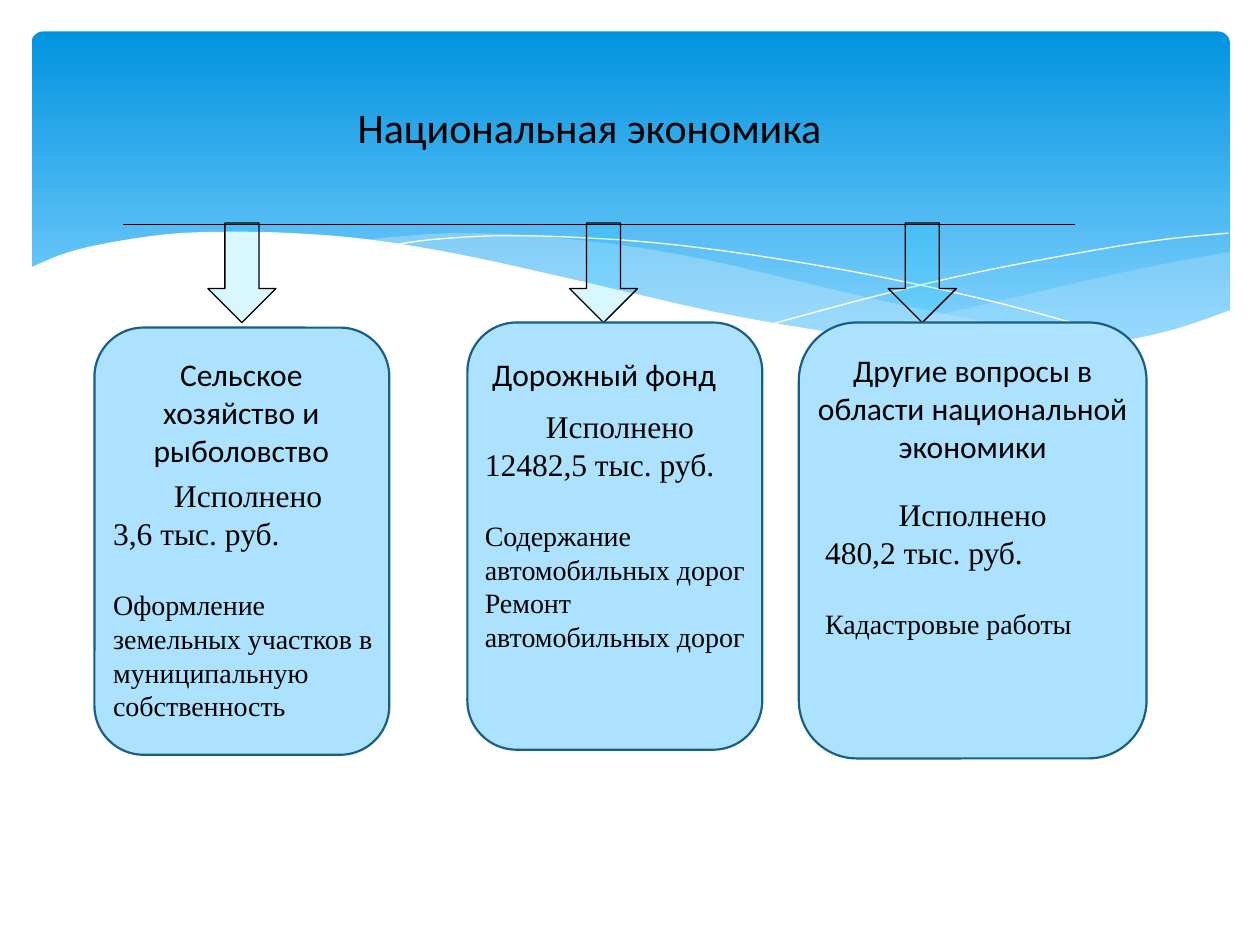
import lxml.etree
import pptx
import pptx.dml.color
import pptx.enum.shapes
import pptx.enum.text
import pptx.oxml.ns
import pptx.util

KIND = pptx.enum.shapes.MSO_SHAPE
ALIGN = pptx.enum.text.PP_ALIGN
COLS, ROWS = 100, 75
WIDE, HIGH = pptx.util.Inches(10), pptx.util.Inches(7.5)
COL, ROW = WIDE / COLS, HIGH / ROWS
HUES = {"ink": "000000", "white": "FFFFFF", "deep": "0293E0", "sky": "83D3FE",
        "mist": "C6E7FC", "cyan": "00CCFF", "card": "ADE2FE", "edge": "195F84"}
LOOKS = {
    "near": {"fill": "mist", "alpha": 29},
    "far": {"fill": "mist", "alpha": 40},
    "base": {"fill": "white"},
    "thread": {"line": "white", "width": 0},
    "arrow": {"fill": "cyan", "alpha": 15, "line": "ink", "width": 0.75},
    "card": {"fill": "card", "line": "edge", "width": 1.25},
}
FRAME = {"word_wrap": True,
         "auto_size": pptx.enum.text.MSO_AUTO_SIZE.SHAPE_TO_FIT_TEXT}
STYLES = {
    "title": ({"name": "Calibri", "size": pptx.util.Pt(24)}, {"alignment": ALIGN.CENTER}),
    "head": ({"name": "Calibri", "size": pptx.util.Pt(18)}, {"alignment": ALIGN.CENTER}),
    "done": ({"name": "Times New Roman", "size": pptx.util.Pt(18)},
             {"alignment": ALIGN.CENTER}),
    "sum": ({"name": "Times New Roman", "size": pptx.util.Pt(18)},
            {"alignment": ALIGN.LEFT}),
    "first": ({"name": "Times New Roman", "size": pptx.util.Pt(16)},
              {"alignment": ALIGN.LEFT, "space_before": pptx.util.Pt(20.7)}),
    "next": ({"name": "Times New Roman", "size": pptx.util.Pt(16)},
             {"alignment": ALIGN.LEFT}),
}
WAVES = [
    ("near", [
        [(95.3, 1.6), (89.8, 2.6), (83.8, 3.9), (73, 6.4), (63.8, 8.1)],
        [(63.8, 8.1), (69.6, 8.8), (75.8, 9.3), (81.2, 9.3), (86.6, 8.8),
         (91.2, 7.8), (95.3, 6.3)]]),
    ("far", [
        [(87, 8.9), (78.4, 7.6), (68.3, 5.6), (60.6, 3.8), (53.2, 2.1),
         (46.6, 1), (39.7, 0.3), (33.8, 0.1), (29, 0.4), (26.3, 0.7)],
        [(26.3, 0.7), (31.9, 1.5), (38.1, 2.7), (42.6, 3.8), (50.7, 5.6),
         (57.8, 7.1), (64.2, 8.2), (69.9, 9), (76.2, 9.4), (81.5, 9.4), (87, 8.9)]]),
    ("thread", [
        [(28.6, 1.1), (32.1, 0.6), (37.8, 0.3), (44.6, 0.5), (51, 1),
         (58.5, 2), (67.2, 3.5), (77.2, 5.7), (88.4, 8.8)]]),
    ("thread", [
        [(59, 7.3), (67.2, 5.1), (75.3, 3.2), (84.3, 1.5), (90.1, 0.6), (95.2, 0.1)]]),
    ("base", [
        [(95.4, 6.2), (90.7, 7.8), (85.2, 8.9), (78.6, 9.3), (72.1, 9),
         (64.5, 8.1), (55.6, 6.6), (48, 4.9), (42.4, 3.6), (34.2, 1.8),
         (26.9, 0.6), (20.7, 0.1), (15.4, 0), (10.9, 0.2), (6.2, 0.9),
         (2.9, 1.7), (0, 2.9)],
        [(0, 14.5), (95.4, 14.5)]]),
]
CARDS = [
    {"box": (7.5, 26, 23.4, 33.9), "head": (1.2, 1.7, 20.9, 10.1),
     "body": (0.5, 11.3, 23.4, 20.9), "arrow": 16.5,
     "title": ["Сельское хозяйство и рыболовство"], "sum": "3,6 тыс. руб.",
     "work": ["Оформление земельных участков в муниципальную собственность"]},
    {"box": (37.1, 25.6, 23.4, 33.9), "head": (0.4, 2.1, 20.9, 4),
     "body": (0.4, 6.2, 23.4, 20.9), "arrow": 45.2,
     "title": ["Дорожный фонд"], "sum": "12482,5 тыс. руб.",
     "work": ["Содержание автомобильных дорог", "Ремонт автомобильных дорог"]},
    {"box": (63.4, 25.6, 27.6, 34.6), "head": (0, 1.8, 27.6, 10.1),
     "body": (1.1, 13.2, 25.4, 12.8), "arrow": 70.5,
     "title": ["Другие вопросы в", "области национальной экономики"],
     "sum": "480,2 тыс. руб.", "work": ["Кадастровые работы"]},
]


def tint(name):
    """Return the named colour."""
    return pptx.dml.color.RGBColor.from_string(HUES[name])


def grid(box):
    """Turn columns and rows into slide lengths."""
    return [round(n * unit) for n, unit in zip(box, (COL, ROW, COL, ROW))]


def shift(box, part):
    """Place a part relative to the corner of its box."""
    return (box[0] + part[0], box[1] + part[1], *part[2:])


def paint(shape, fill=None, alpha=None, line=None, width=0):
    """Give a shape its fill, opacity and outline."""
    shape.shadow.inherit = False
    if fill:
        shape.fill.solid()
        shape.fill.fore_color.rgb = tint(fill)
    else:
        shape.fill.background()
    if alpha:
        hue = shape.element.spPr.find(".//" + pptx.oxml.ns.qn("a:srgbClr"))
        lxml.etree.SubElement(hue, pptx.oxml.ns.qn("a:alpha"), val=str(alpha * 1000))
    if line:
        shape.line.color.rgb = tint(line)
        shape.line.width = pptx.util.Pt(width)
    else:
        shape.line.fill.background()


def write(slide, box, rows):
    """Write styled paragraphs in a text box."""
    frame = slide.shapes.add_textbox(*grid(box)).text_frame
    for key, value in FRAME.items():
        setattr(frame, key, value)
    for i, (words, style) in enumerate(rows):
        para = frame.add_paragraph() if i else frame.paragraphs[0]
        run = para.add_run()
        run.text = words
        run.font.color.rgb = tint("ink")
        for goal, values in zip((run.font, para), STYLES[style]):
            for key, value in values.items():
                setattr(goal, key, value)


def smooth(knots, steps=6):
    """Return points along a smooth curve through the knots."""
    if len(knots) < 3:
        return knots
    ends = [knots[0], *knots, knots[-1]]
    points = [knots[0]]
    for a, b, c, d in zip(ends, ends[1:], ends[2:], ends[3:]):
        for t in (n / steps for n in range(1, steps + 1)):
            points.append(tuple(
                q + t * (r - p) / 2 + t * t * (2 * p - 5 * q + 4 * r - s) / 2
                + t ** 3 * (3 * q - p - 3 * r + s) / 2
                for p, q, r, s in zip(a, b, c, d)))
    return points


def banner(slide, box):
    """Draw the gradient band behind the title."""
    band = slide.shapes.add_shape(KIND.ROUNDED_RECTANGLE, *grid(box))
    paint(band)
    band.adjustments[0] = 0.034
    band.fill.gradient()
    band.fill.gradient_angle = 270
    for stop, name, place in zip(band.fill.gradient_stops, ("deep", "sky"), (0, 0.9)):
        stop.color.rgb = tint(name)
        stop.position = place


def waves(slide, box):
    """Draw the waves along the foot of the band."""
    group = slide.shapes.add_group_shape()
    for look, curves in WAVES:
        points = [grid(shift(box, point)) for knots in curves for point in smooth(knots)]
        pen = group.shapes.build_freeform(*points[0])
        pen.add_line_segments(points[1:], close=look != "thread")
        paint(pen.convert_to_shape(), **LOOKS[look])


def rail(slide, box):
    """Draw the line and the arrows that hang from it."""
    left, top, wide, high = box
    for card in CARDS:
        arrow = slide.shapes.add_shape(
            KIND.DOWN_ARROW, *grid((card["arrow"], top, 5.4, high)))
        paint(arrow, **LOOKS["arrow"])
    ends = grid((left, top + 0.1, left + wide, top + 0.1))
    line = slide.shapes.add_connector(pptx.enum.shapes.MSO_CONNECTOR.STRAIGHT, *ends)
    line.line.color.rgb = tint("ink")
    line.line.width = pptx.util.Pt(0.75)
    lxml.etree.SubElement(line.element.spPr, pptx.oxml.ns.qn("a:effectLst"))


def panel(slide, box, card):
    """Draw one card with its heading and body."""
    shape = slide.shapes.add_shape(KIND.ROUNDED_RECTANGLE, *grid(box))
    paint(shape, **LOOKS["card"])
    write(slide, shift(box, card["head"]), [(row, "head") for row in card["title"]])
    work = [(row, "next" if i else "first") for i, row in enumerate(card["work"])]
    write(slide, shift(box, card["body"]),
          [("Исполнено", "done"), (card["sum"], "sum"), *work])


def main():
    """Build and save the slide."""
    deck = pptx.Presentation()
    deck.slide_width, deck.slide_height = WIDE, HIGH
    slide = deck.slides.add_slide(deck.slide_layouts[6])
    banner(slide, (2.5, 2.5, 95.1, 27))
    waves(slide, (2.3, 18.4))
    write(slide, (9.8, 7.6, 74, 5), [("Национальная экономика", "title")])
    rail(slide, (9.8, 17.7, 75.5, 7.9))
    for card in CARDS:
        panel(slide, card["box"], card)
    deck.save("out.pptx")


if __name__ == "__main__":
    main()
